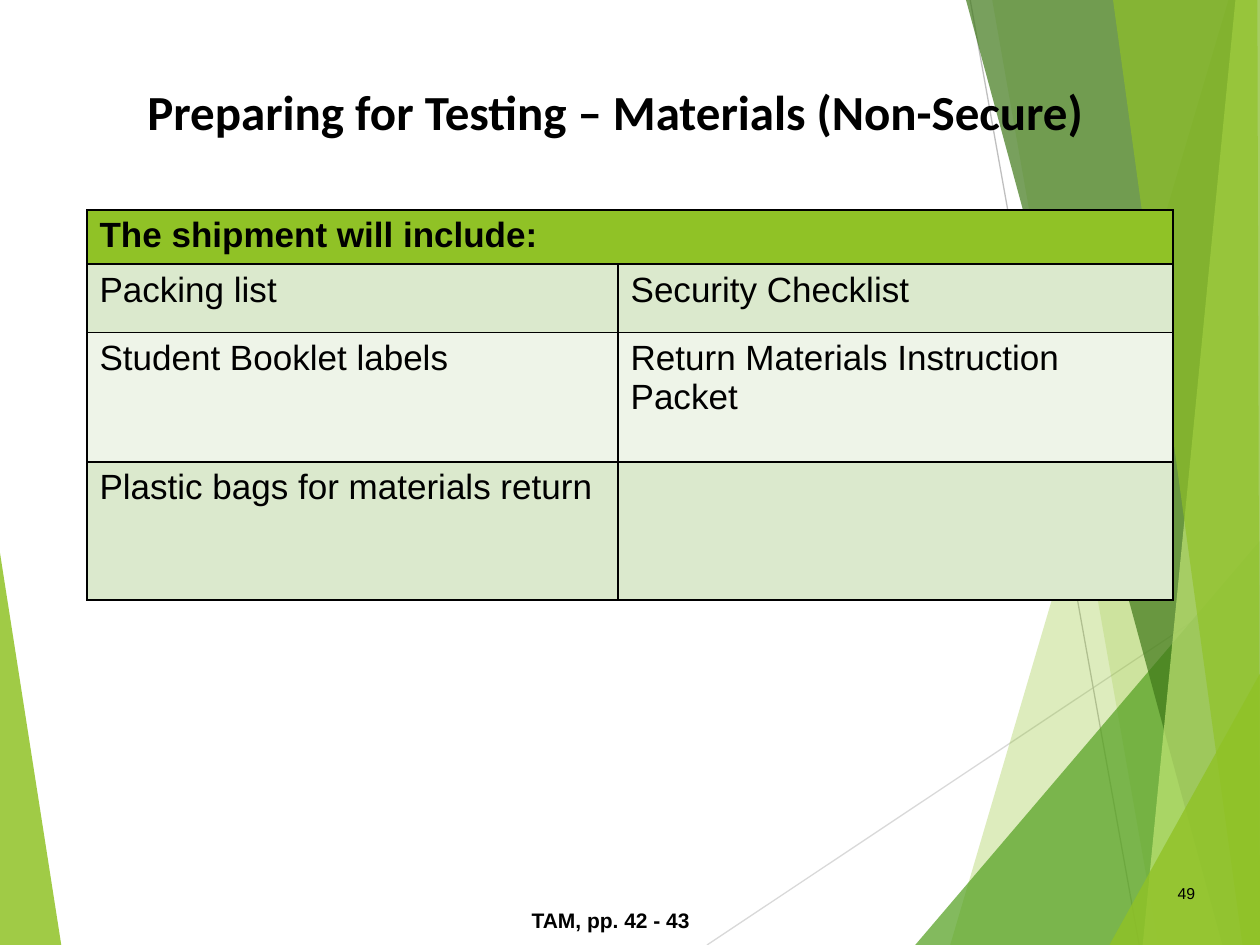
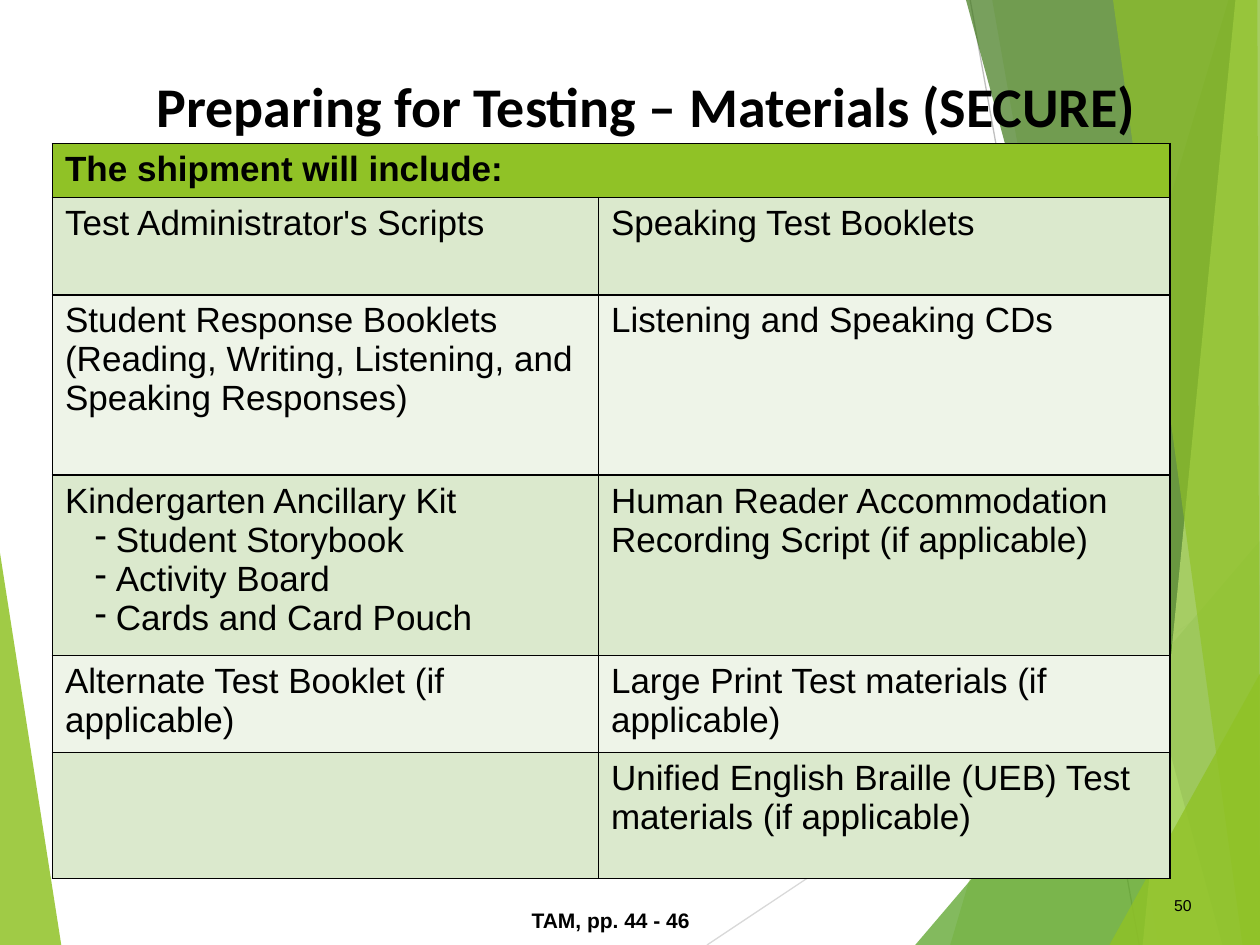
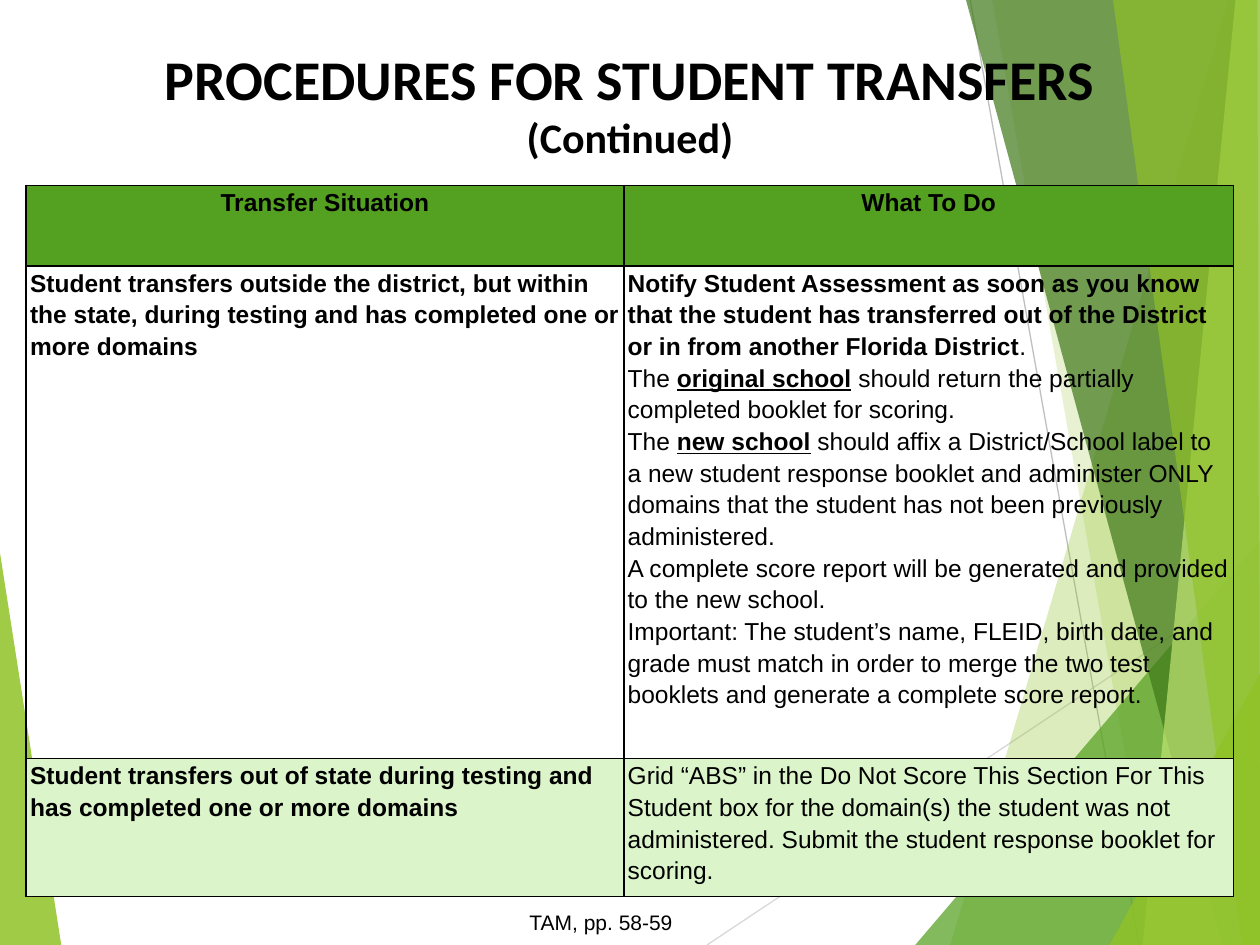
from lxml import etree
from pptx import Presentation
from pptx.dml.color import RGBColor
from pptx.enum import shapes, text
from pptx.oxml import ns
from pptx.util import Pt

# Shared look
W, H = 720, 540
BLACK, LIME, GREEN = "000000", "90C226", "54A021"
BAND_DARK, BAND_LIGHT, BAND_MINT = "DBE9CD", "EEF4E8", "DBF4CA"
BODY_FONT, TITLE_FONT = "Arial", "Calibri"
LEFT, CENTER, RIGHT = text.PP_ALIGN.LEFT, text.PP_ALIGN.CENTER, text.PP_ALIGN.RIGHT

LEFT_WEDGE = ([(0, 316), (35, H), (0, H)], LIME, 85)
RAYS = [((404, H), (W, 329.5), "D9D9D9"), ((554.4, 0), (651, H), "BFBFBF")]
RIGHT_FACETS = [
    ([(702, 0), (543, H), (W, H), (W, 0)], LIME, 30),
    ([(567, 0), (662, H), (W, H), (W, 0)], LIME, 20),
    ([(523, H), (W, 309), (W, H)], GREEN, 72),
    ([(552, 0), (698.5, H), (W, H), (W, 0)], "3F7819", 70),
    ([(706, 0), (653, H), (W, H), (W, 0)], "C0E474", 70),
    ([(636, 0), (710, H), (W, H), (718.5, 0)], LIME, 65),
    ([(634, H), (W, 385), (W, H)], LIME, 80),
]


def rgb(value):
    return RGBColor.from_string(value)


def sub(parent, tag, **attrs):
    return etree.SubElement(parent, ns.qn(tag), **attrs)


def style(font, size, bold=False, name=BODY_FONT):
    font.name, font.size, font.bold = name, Pt(size), bold
    font.color.rgb = rgb(BLACK)


# Backdrop, drawn once and moved to the layout
def add_facet(s, points, color, alpha):
    builder = s.shapes.build_freeform(Pt(points[0][0]), Pt(points[0][1]), scale=1.0)
    builder.add_line_segments([(Pt(x), Pt(y)) for x, y in points[1:]])
    sp = builder.convert_to_shape()
    sp.shadow.inherit = False
    sp.fill.solid()
    sp.fill.fore_color.rgb = rgb(color)
    sp.line.fill.background()
    clr = sp.element.spPr.find(".//" + ns.qn("a:srgbClr"))
    sub(clr, "a:alpha", val=str(alpha * 1000))
    return sp


def add_ray(s, start, end, color):
    ends = [Pt(v) for v in start + end]
    sp = s.shapes.add_connector(shapes.MSO_CONNECTOR.STRAIGHT, *ends)
    sp.line.color.rgb = rgb(color)
    sp.line.width = Pt(0.75)
    sub(sp.element.spPr, "a:effectLst")
    return sp


def add_backdrop(s, layout):
    for sp in list(layout.placeholders):
        if sp.placeholder_format.type != shapes.PP_PLACEHOLDER.TITLE:
            sp.element.getparent().remove(sp.element)
    parts = [add_facet(s, *LEFT_WEDGE)]
    parts += [add_ray(s, *ray) for ray in RAYS]
    parts += [add_facet(s, *facet) for facet in RIGHT_FACETS]
    for sp in parts:
        layout.shapes.element.append(sp.element)


# Title, footer and page number
def set_title(s, box, lines, sizes):
    sp = s.shapes.title
    sp.left, sp.top, sp.width, sp.height = [Pt(v) for v in box]
    tf = sp.text_frame
    tf.text = lines
    tf.word_wrap = True
    tf.auto_size = text.MSO_AUTO_SIZE.NONE
    tf.vertical_anchor = text.MSO_ANCHOR.TOP
    for p, size in zip(tf.paragraphs, sizes):
        p.alignment = CENTER
        style(p.runs[0].font, size, True, TITLE_FONT)


def add_label(s, box, words, size, align=CENTER, bold=False, anchor=text.MSO_ANCHOR.TOP):
    tf = s.shapes.add_textbox(*[Pt(v) for v in box]).text_frame
    tf.text = words
    tf.word_wrap = True
    tf.vertical_anchor = anchor
    tf.paragraphs[0].alignment = align
    style(tf.paragraphs[0].runs[0].font, size, bold)


# Tables: *text* is bold, _text_ is bold and underlined, "- " starts a bullet
def add_line(p, line, size):
    if line.startswith("- "):
        pPr = p._p.get_or_add_pPr()
        pPr.set("marL", str(Pt(29)))
        pPr.set("indent", str(-Pt(12)))
        sub(pPr, "a:buChar", char="-")
        line = line[2:]
    for i, part in enumerate(line.split("*")):
        for j, words in enumerate(part.split("_")):
            if words:
                r = p.add_run()
                r.text = words
                style(r.font, size, bool(i % 2 or j % 2))
                if j % 2:
                    r.font.underline = True


def format_cell(cell, fill, margins):
    tcPr = cell._tc.get_or_add_tcPr()
    for side in ("a:lnL", "a:lnR", "a:lnT", "a:lnB"):
        ln = sub(tcPr, side, w=str(Pt(1)))
        sub(sub(ln, "a:solidFill"), "a:srgbClr", val=BLACK)
    cell.margin_left = cell.margin_right = Pt(margins[0])
    cell.margin_top = cell.margin_bottom = Pt(margins[1])
    if fill:
        cell.fill.solid()
        cell.fill.fore_color.rgb = rgb(fill)
    else:
        cell.fill.background()


def add_grid(s, left, top, widths, heights, rows, fills, size, margins,
             header_align=LEFT, spacing=1.0):
    box = [Pt(v) for v in (left, top, sum(widths), sum(heights))]
    table = s.shapes.add_table(len(rows), len(widths), *box).table
    table.first_row = table.horz_banding = False
    for column, width in zip(table.columns, widths):
        column.width = Pt(width)
    for i, (row, height, fill) in enumerate(zip(rows, heights, fills)):
        table.rows[i].height = Pt(height)
        for j, cell in enumerate(table.rows[i].cells):
            format_cell(cell, fill, margins)
            lines = row[j].split("\n") if j < len(row) else []
            tf = cell.text_frame
            for k, line in enumerate(lines):
                p = tf.paragraphs[0] if k == 0 else tf.add_paragraph()
                p.alignment = LEFT if i else header_align
                p.line_spacing = spacing
                add_line(p, line, size)
        if len(row) < len(widths):
            table.cell(i, 0).merge(table.cell(i, len(widths) - 1))


# Slide types
def shipment_slide(s, title, title_box, title_size, table_at, widths, heights, items,
                   pages, number, number_at):
    set_title(s, title_box, title, [title_size])
    rows = [["*The shipment will include:*"]] + items
    fills = [LIME] + [(BAND_DARK, BAND_LIGHT)[i % 2] for i in range(len(items))]
    add_grid(s, *table_at, widths, heights, rows, fills, 20, (7.2, 3.6))
    add_label(s, (40, 515, 618, 22), pages, 12, bold=True)
    add_label(s, (*number_at, 40, 29), number, 9, RIGHT, anchor=text.MSO_ANCHOR.MIDDLE)


def transfer_slide(s, title, rows, pages):
    set_title(s, (-6, 21.6, 732, 75), title, [32, 24])
    add_grid(s, 15, 106, [341.5, 348.5], [46, 281.5, 79], rows, [GREEN, None, BAND_MINT],
             14, (2.2, 0), CENTER, 1.15)
    add_label(s, (270, 516, 147, 22), pages, 12)


NON_SECURE = [
    ["Packing list", "Security Checklist"],
    ["Student Booklet labels", "Return Materials Instruction Packet"],
    ["Plastic bags for materials return", ""],
]
SECURE = [
    ["Test Administrator's Scripts", "Speaking Test Booklets"],
    ["Student Response Booklets (Reading, Writing, Listening, and Speaking Responses)",
     "Listening and Speaking CDs"],
    ["Kindergarten Ancillary Kit\n- Student Storybook\n- Activity Board\n- Cards and Card Pouch",
     "Human Reader Accommodation Recording Script (if applicable)"],
    ["Alternate Test Booklet (if applicable)", "Large Print Test materials (if applicable)"],
    ["", "Unified English Braille (UEB) Test materials (if applicable)"],
]
TRANSFERS = [
    ["*Transfer Situation*", "*What To Do*"],
    ["*Student transfers outside the district, but within the state, during testing and "
     "has completed one or more domains*",
     "*Notify Student Assessment as soon as you know that the student has transferred out "
     "of the District or in from another Florida District*.\n"
     "The _original school_ should return the partially completed booklet for scoring.\n"
     "The _new school_ should affix a District/School label to a new student response "
     "booklet and administer ONLY domains that the student has not been previously "
     "administered.\n"
     "A complete score report will be generated and provided to the new school.\n"
     "Important: The student’s name, FLEID, birth date, and grade must match in order to "
     "merge the two test booklets and generate a complete score report."],
    ["*Student transfers out of state during testing and has completed one or more domains*",
     "Grid “ABS” in the Do Not Score This Section For This Student box for the domain(s) "
     "the student was not administered. Submit the student response booklet for scoring."],
]


def main():
    prs = Presentation()
    prs.slide_width, prs.slide_height = Pt(W), Pt(H)
    layout = prs.slide_layouts[5]
    slides = [prs.slides.add_slide(layout) for _ in range(3)]
    add_backdrop(slides[0], layout)
    shipment_slide(slides[0], "Preparing for Testing – Materials (Non-Secure)",
                   (0, 43, 703, 66), 28, (49.7, 120), [303.5, 317], [31, 39, 74, 79],
                   NON_SECURE, "TAM, pp. 42 - 43", "49", (650, 496))
    shipment_slide(slides[1], "Preparing for Testing – Materials (SECURE)",
                   (19, 37, 701, 66), 32, (30, 82), [312, 326.5], [31, 55.5, 103, 103, 55.5, 72],
                   SECURE, "TAM, pp. 44 - 46", "50", (648, 503))
    transfer_slide(slides[2], "PROCEDURES FOR STUDENT TRANSFERS\n(Continued)",
                   TRANSFERS, "TAM, pp. 58-59")
    prs.save("out.pptx")


if __name__ == "__main__":
    main()
